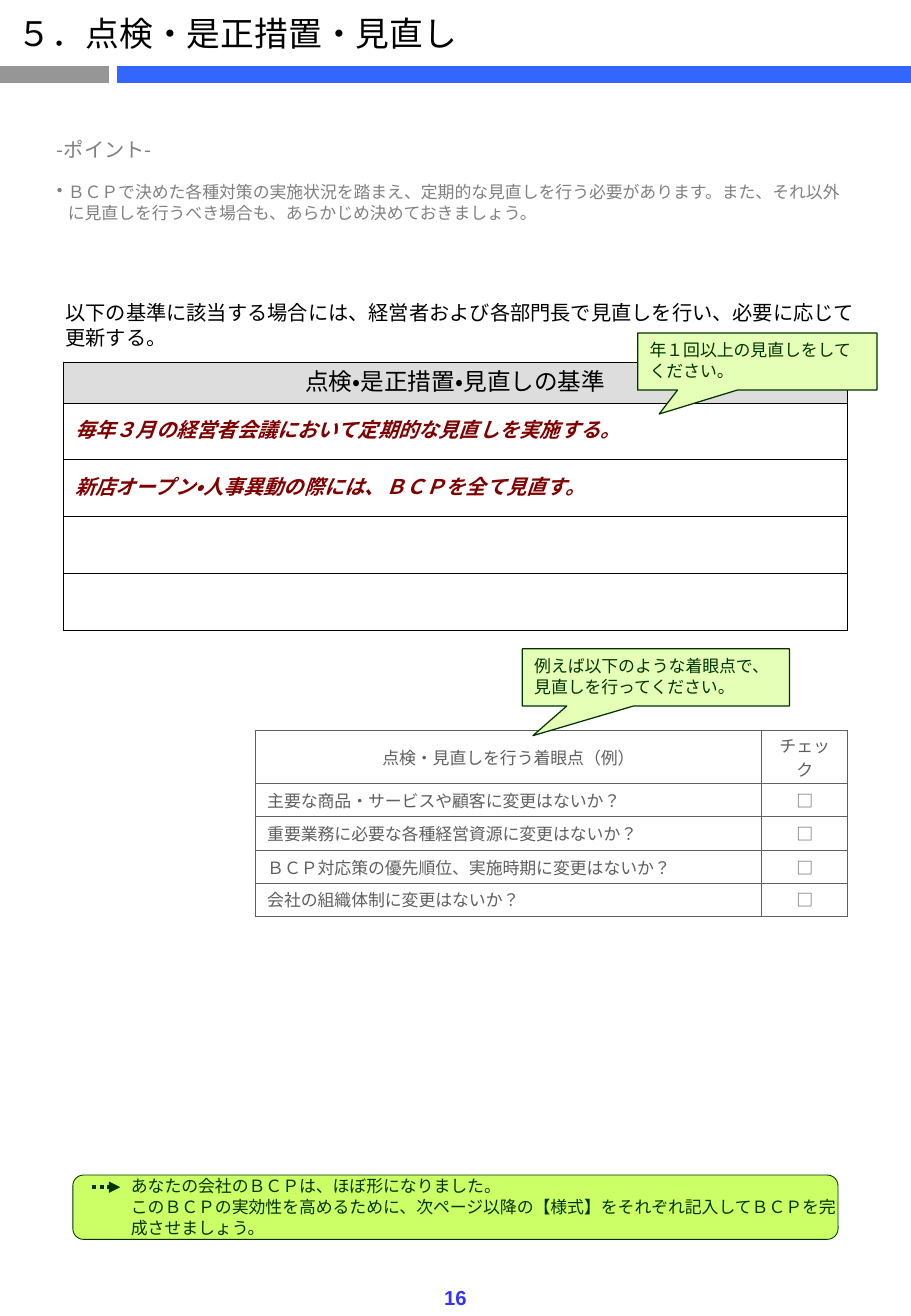
from lxml import etree
from pptx import Presentation
from pptx.dml.color import RGBColor
from pptx.enum.dml import MSO_LINE
from pptx.enum.lang import MSO_LANGUAGE_ID as LANG
from pptx.enum.shapes import MSO_CONNECTOR, MSO_SHAPE
from pptx.enum.text import MSO_ANCHOR, PP_ALIGN
from pptx.oxml.ns import qn
from pptx.util import Inches, Pt

COLORS = {
    "black": "000000", "gray": "808080", "dark_gray": "5F5F5F",
    "bar_gray": "969696", "bar_blue": "3366FF", "page_blue": "3333FF",
    "header": "DDDDDD", "maroon": "800000", "dark_green": "003300",
    "lime": "CCFF66", "pale_green": "E5FFB7",
}
RGB = {name: RGBColor.from_string(value) for name, value in COLORS.items()}
NOTO, ARIAL = "Noto Sans CJK JP", "Arial"
CENTER = PP_ALIGN.CENTER

prs = Presentation()
prs.slide_width, prs.slide_height = Inches(7.5), Inches(10.83)
slide = prs.slides.add_slide(prs.slide_layouts[6])
shapes = slide.shapes


def write(paragraph, text, size, color, font=ARIAL, align=None, leading=None,
          before=0, bold=False, italic=False, language=LANG.JAPANESE):
    """Add one styled run to a paragraph and set the paragraph's spacing."""
    paragraph.alignment = align
    paragraph.space_before = Pt(before)
    if leading:
        paragraph.line_spacing = Pt(leading)
    run = paragraph.add_run()
    run.text = text
    run.font.name, run.font.size = font, Pt(size)
    run.font.color.rgb = RGB[color]
    run.font.bold, run.font.italic = bold, italic
    run.font.language_id = language
    if font == NOTO:
        etree.SubElement(run.font._element, qn("a:ea"), typeface=font)


def add_grid(left, top, widths, heights, color, weight):
    """Add an unfilled table with even borders and return it."""
    grid = shapes.add_table(len(heights), len(widths), Inches(left), Inches(top),
                            Inches(sum(widths)), Inches(sum(heights))).table
    grid.first_row = grid.horz_banding = False
    for column, width in zip(grid.columns, widths):
        column.width = Inches(width)
    for row, height in zip(grid.rows, heights):
        row.height = Inches(height)
    for cell in grid.iter_cells():
        cell.fill.background()
        cell.vertical_anchor = MSO_ANCHOR.MIDDLE
        cell.margin_top = cell.margin_bottom = Inches(0.02)
        cell_props = cell._tc.get_or_add_tcPr()
        for place, side in enumerate(("lnL", "lnR", "lnT", "lnB")):
            border = etree.Element(qn(f"a:{side}"), w=str(Pt(weight)))
            paint = etree.SubElement(border, qn("a:solidFill"))
            etree.SubElement(paint, qn("a:srgbClr"), val=COLORS[color])
            cell_props.insert(place, border)
    return grid


# Closing panel, title bars and the dotted arrow
panel = shapes.add_shape(MSO_SHAPE.ROUNDED_RECTANGLE, Inches(0.6), Inches(9.67),
                         Inches(6.3), Inches(0.53))
panel.shadow.inherit = False
panel.fill.solid()
panel.fill.fore_color.rgb = RGB["lime"]
panel.line.color.rgb = RGB["dark_green"]
panel.line.width = Pt(0.5)

for start, end, y, color, weight in (
    (0, 0.9, 0.61, "bar_gray", 10),
    (0.96, 7.5, 0.61, "bar_blue", 10),
    (0.76, 0.99, 9.77, "dark_green", 2.25),
):
    rule = shapes.add_connector(MSO_CONNECTOR.STRAIGHT, Inches(start), Inches(y),
                                Inches(end), Inches(y))
    rule.line.color.rgb = RGB[color]
    rule.line.width = Pt(weight)
    etree.SubElement(rule._element.spPr, qn("a:effectLst"))
next_arrow = rule
next_arrow.line.dash_style = MSO_LINE.ROUND_DOT
etree.SubElement(next_arrow.line._get_or_add_ln(), qn("a:tailEnd"), type="triangle")

# Tables
criteria = add_grid(0.52, 2.98, [6.46], [0.34, 0.46, 0.47, 0.47, 0.47], "black", 0.5)
heading = criteria.cell(0, 0)
heading.fill.solid()
heading.fill.fore_color.rgb = RGB["header"]
write(heading.text_frame.paragraphs[0], "点検・是正措置・見直しの基準", 14, "black",
      align=CENTER, leading=17.3, before=2.8)
for row, rule_text in enumerate((
    "毎年３月の経営者会議において定期的な見直しを実施する。",
    "新店オープン・人事異動の際には、ＢＣＰを全て見直す。",
), start=1):
    write(criteria.cell(row, 0).text_frame.paragraphs[0], rule_text, 12, "maroon",
          leading=14.8, before=2.4, bold=True, italic=True)

viewpoints = (
    ("点検・見直しを行う着眼点（例）", "チェック"),
    ("主要な商品・サービスや顧客に変更はないか？", "□"),
    ("重要業務に必要な各種経営資源に変更はないか？", "□"),
    ("ＢＣＰ対応策の優先順位、実施時期に変更はないか？", "□"),
    ("会社の組織体制に変更はないか？", "□"),
)
checklist = add_grid(2.1, 6.01, [4.17, 0.71], [0.44, 0.27, 0.28, 0.27, 0.27],
                     "dark_gray", 0.75)
for row, entries in enumerate(viewpoints):
    for col, entry in enumerate(entries):
        write(checklist.cell(row, col).text_frame.paragraphs[0], entry, 10, "dark_gray",
              NOTO, CENTER if row == 0 or col == 1 else PP_ALIGN.LEFT)

# Callouts
for left, top, width, tip, advice in (
    (4.3, 5.34, 2.2, (-0.46, 1.02), "例えば以下のような着眼点で、見直しを行ってください。"),
    (5.25, 2.74, 1.97, (-0.41, 0.92), "年１回以上の見直しをしてください。"),
):
    callout = shapes.add_shape(MSO_SHAPE.RECTANGULAR_CALLOUT, Inches(left), Inches(top),
                               Inches(width), Inches(0.47))
    callout.adjustments[0], callout.adjustments[1] = tip
    callout.shadow.inherit = False
    callout.fill.solid()
    callout.fill.fore_color.rgb = RGB["pale_green"]
    callout.line.color.rgb = RGB["dark_green"]
    callout.line.width = Pt(0.75)
    callout.text_frame.word_wrap = True
    callout.text_frame.vertical_anchor = MSO_ANCHOR.TOP
    write(callout.text_frame.paragraphs[0], advice, 10, "dark_green",
          align=PP_ALIGN.LEFT, leading=12.4)

# Free text: box, then its paragraphs
texts = (
    ((0.05, 0.06, 5, 0.43), [
        ("５．点検・是正措置・見直し", dict(size=20, color="black", font=NOTO))]),
    ((0.37, 0.85, 6.77, 1.03), [
        ("-ポイント-", dict(size=12, color="gray", font=NOTO)),
        ("ＢＣＰで決めた各種対策の実施状況を踏まえ、定期的な見直しを行う必要があります。"
         "また、それ以外に見直しを行うべき場合も、あらかじめ決めておきましょう。",
         dict(size=10, color="gray", font=NOTO, leading=12.4, before=11.8))]),
    ((0.44, 2.42, 6.71, 0.7), [
        ("以下の基準に該当する場合には、経営者および各部門長で見直しを行い、"
         "必要に応じて更新する。",
         dict(size=12, color="black", leading=14.8, before=1))]),
    ((0.98, 9.62, 6, 0.6), [
        ("あなたの会社のＢＣＰは、ほぼ形になりました。",
         dict(size=10, color="dark_green", leading=12.4)),
        ("このＢＣＰの実効性を高めるために、次ページ以降の【様式】をそれぞれ記入して"
         "ＢＣＰを完成させましょう。",
         dict(size=10, color="dark_green", leading=12.4))]),
    ((3.25, 10.53, 1, 0.3), [
        ("16", dict(size=12, color="page_blue", align=CENTER, bold=True,
                    language=LANG.ENGLISH_US))]),
)
frames = []
for box, lines in texts:
    frame = shapes.add_textbox(*map(Inches, box)).text_frame
    frame.word_wrap = True
    frames.append(frame)
    for number, (line, style) in enumerate(lines):
        write(frame.add_paragraph() if number else frame.paragraphs[0], line, **style)

point = frames[1]
point.margin_top = Inches(0.28)
bullet_props = point.paragraphs[1]._p.get_or_add_pPr()
bullet_props.set("marL", str(Inches(0.09)))
bullet_props.set("indent", str(Inches(-0.09)))
etree.SubElement(bullet_props, qn("a:buChar"), char="•")

prs.save("out.pptx")
